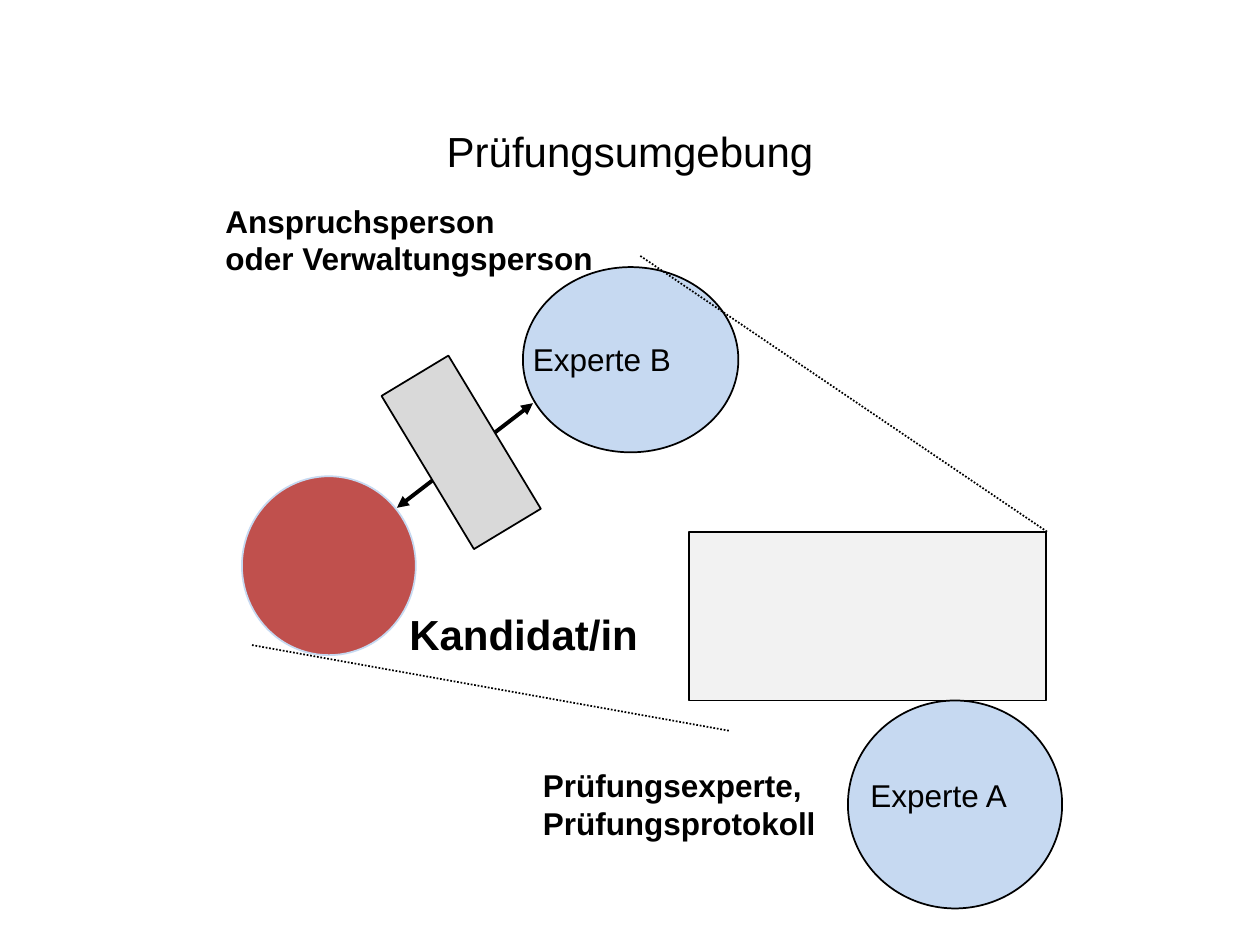
from lxml.etree import SubElement
from pptx import Presentation
from pptx.dml.color import RGBColor
from pptx.enum.dml import MSO_LINE
from pptx.enum.shapes import MSO_CONNECTOR, MSO_SHAPE
from pptx.enum.text import MSO_ANCHOR, MSO_AUTO_SIZE, PP_ALIGN
from pptx.oxml.ns import qn
from pptx.util import Pt

PX = 9144
BLACK, BLUE, RED = "000000", "C6D9F1", "C0504D"
DESK, TABLE = "F2F2F2", "D9D9D9"


def px(*values):
    """Turn px lengths, 100 to the inch, into EMU."""
    return [value * PX for value in values]


def rgb(value):
    """Turn a hex string into a colour."""
    return RGBColor.from_string(value)


def style_text(tf, lines, size, bold=False, align=PP_ALIGN.LEFT):
    """Fill a text frame with one formatted paragraph per line."""
    for i, line in enumerate(lines):
        p = tf.paragraphs[0] if i == 0 else tf.add_paragraph()
        p.alignment = align
        r = p.add_run()
        r.text = line
        for name, value in {"name": "Arial", "size": Pt(size), "bold": bold}.items():
            setattr(r.font, name, value)
        r.font.color.rgb = rgb(BLACK)


def add_label(s, box, lines, size=18, bold=False, wrap=True):
    """Add a text box."""
    tf = s.shapes.add_textbox(*px(*box)).text_frame
    tf.word_wrap = wrap
    tf.auto_size = MSO_AUTO_SIZE.SHAPE_TO_FIT_TEXT
    style_text(tf, lines, size, bold)


def add_figure(s, kind, box, fill, line=BLACK, rotation=0):
    """Add a filled, outlined shape."""
    sp = s.shapes.add_shape(kind, *px(*box))
    sp.shadow.inherit = False
    sp.rotation = rotation
    sp.fill.solid()
    sp.fill.fore_color.rgb = rgb(fill)
    sp.line.color.rgb = rgb(line)
    sp.line.width = Pt(1)


def add_line(s, start, end, width=1, dash=None, arrows=False):
    """Add a straight line, dotted or with arrowheads at both ends."""
    cxn = s.shapes.add_connector(MSO_CONNECTOR.STRAIGHT, *px(*start, *end))
    cxn.line.color.rgb = rgb(BLACK)
    cxn.line.width = Pt(width)
    if dash:
        cxn.line.dash_style = dash
    if arrows:
        for tag in ("a:headEnd", "a:tailEnd"):
            SubElement(cxn.line._get_or_add_ln(), qn(tag), type="triangle")
    SubElement(cxn._element.spPr, qn("a:effectLst"))


def add_title(s, box, text):
    """Place and format the title placeholder."""
    title = s.shapes.title
    for name, value in zip(("left", "top", "width", "height"), px(*box)):
        setattr(title, name, value)
    tf = title.text_frame
    tf.vertical_anchor = MSO_ANCHOR.MIDDLE
    style_text(tf, [text], 24, align=PP_ALIGN.CENTER)


def add_interview(s, x, y):
    """Draw the candidate and expert B facing each other across a table."""
    add_figure(s, MSO_SHAPE.OVAL, (x + 246, y + 57, 171, 147), BLUE)
    add_figure(s, MSO_SHAPE.OVAL, (x + 23, y + 223, 138, 142), RED, BLUE)
    add_line(s, (x + 146, y + 248), (x + 254, y + 165), 2.25, arrows=True)
    add_figure(s, MSO_SHAPE.RECTANGLE, (x + 126, y + 173, 142, 62), TABLE, rotation=58.9)
    add_label(s, (x + 146, y + 323, 216, 50), ["Kandidat/in"], 24, True)
    add_label(s, (x, y, 315, 71), ["Anspruchsperson", "oder Verwaltungsperson"],
              bold=True, wrap=False)
    add_label(s, (x + 244, y + 110, 181, 40), ["Experte B"])


def add_observer(s, x, y):
    """Draw expert A at the desk with the role label."""
    add_figure(s, MSO_SHAPE.RECTANGLE, (x + 126, y, 283, 134), DESK)
    add_figure(s, MSO_SHAPE.OVAL, (x + 252, y + 134, 170, 165), BLUE)
    add_label(s, (x, y + 181, 239, 71), ["Prüfungsexperte,", "Prüfungsprotokoll"],
              bold=True, wrap=False)
    add_label(s, (x + 260, y + 189, 173, 40), ["Experte A"])


def add_sight_lines(s, x, y):
    """Draw the dotted limits of the observer's field of view."""
    for start, end in (((0, 309), (379, 377)), ((631, 219), (308, 0))):
        add_line(s, (x + start[0], y + start[1]), (x + end[0], y + end[1]),
                 dash=MSO_LINE.ROUND_DOT)


def main():
    """Build and save the slide."""
    prs = Presentation()
    prs.slide_width, prs.slide_height = px(1000, 750)
    s = prs.slides.add_slide(prs.slide_layouts[5])
    add_title(s, (50, 84, 900, 71), "Prüfungsumgebung")
    add_interview(s, 169, 155)
    add_observer(s, 421, 422)
    add_sight_lines(s, 200, 203)
    prs.save("out.pptx")


if __name__ == "__main__":
    main()
